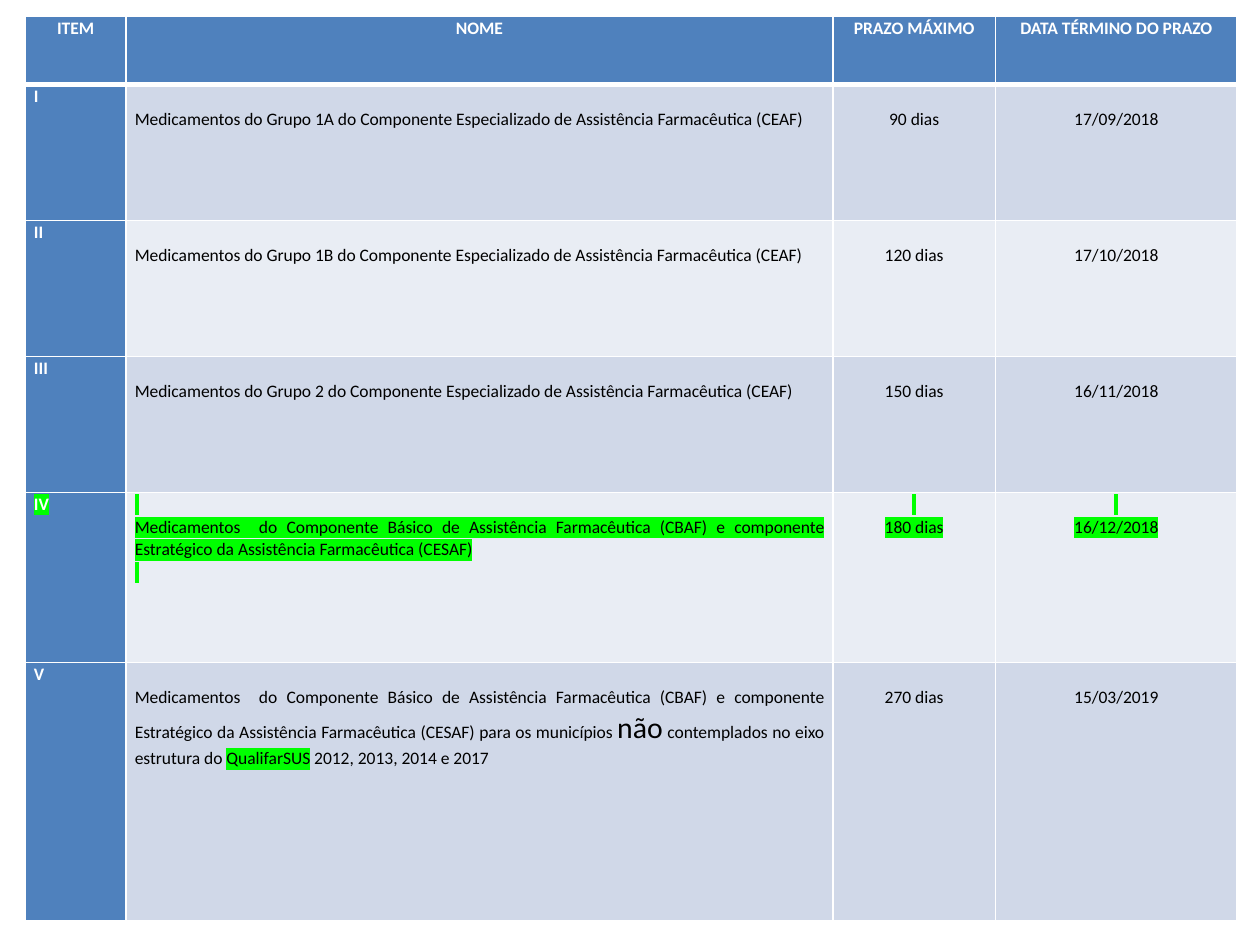
from lxml import etree
from pptx import Presentation
from pptx.dml.color import RGBColor
from pptx.enum.text import PP_ALIGN
from pptx.oxml.ns import qn
from pptx.util import Inches, Pt

LEFT, CENTER, JUSTIFY = PP_ALIGN.LEFT, PP_ALIGN.CENTER, PP_ALIGN.JUSTIFY
WIDTH, HEIGHT = 10, 7.5
COLUMN_SHARES = [0.08, 0.561, 0.129, 0.192]  # of the slide's width
ROW_UNIT = 0.27
ROW_UNITS = [2, 4, 4, 4, 5, 7.6]
TEXT_LINE = 0.18  # height of one line of table text
BLUE, WHITE, BLACK, GREEN = "4F81BD", "FFFFFF", "000000", "00FF00"
BANDS = ["D0D8E8", "E9EDF4"]
MARK = " "  # no-break space that carries a visible highlight

HEADINGS = ["ITEM", "NOME", "PRAZO MÁXIMO", "DATA TÉRMINO DO PRAZO"]
CEAF = "Medicamentos do Grupo {} do Componente Especializado de Assistência Farmacêutica (CEAF)"
CBAF = ("Medicamentos  do Componente Básico de Assistência Farmacêutica (CBAF) e componente "
        "Estratégico da Assistência Farmacêutica (CESAF)")
# A name is a list of (text, format) runs
DEADLINES = [
    ("I", [(CEAF.format("1A"), {})], "90 dias", "17/09/2018"),
    ("II", [(CEAF.format("1B"), {})], "120 dias", "17/10/2018"),
    ("III", [(CEAF.format("2"), {})], "150 dias", "16/11/2018"),
    ("IV", [(CBAF, {})], "180 dias", "16/12/2018"),
    ("V", [(CBAF + " para os municípios ", {}),
           ("não", {"size": 17}),
           (" contemplados no eixo estrutura do ", {}),
           ("QualifarSUS", {"highlight": GREEN}),
           (" 2012, 2013, 2014 e 2017", {})], "270 dias", "15/03/2019"),
]
HIGHLIGHTED_ITEM = "IV"


def rgb(value):
    return RGBColor.from_string(value)


def add_text(paragraph, text, size=10, color=BLACK, bold=False, highlight=None):
    run = paragraph.add_run()
    run.text = text
    font = run.font
    font.size, font.bold, font.name = Pt(size), bold, "Calibri"
    font.color.rgb = rgb(color)
    if highlight:
        marker = etree.Element(qn("a:highlight"))
        etree.SubElement(marker, qn("a:srgbClr"), val=highlight)
        run.font._element.find(qn("a:solidFill")).addnext(marker)


def set_borders(cell, top=1, bottom=1):
    properties = cell._tc.get_or_add_tcPr()
    widths = {"a:lnL": 1, "a:lnR": 1, "a:lnT": top, "a:lnB": bottom}
    for position, (tag, width) in enumerate(widths.items()):
        line = etree.Element(qn(tag), w=str(Pt(width)))
        fill = etree.SubElement(line, qn("a:solidFill"))
        etree.SubElement(fill, qn("a:srgbClr"), val=WHITE)
        properties.insert(position, line)


def fill_cell(cell, paragraphs, fill, align, top_lines=0, borders=None, **text_format):
    cell.margin_left = cell.margin_right = Inches(0.07)
    cell.margin_top, cell.margin_bottom = Inches(top_lines * TEXT_LINE), 0
    cell.fill.solid()
    cell.fill.fore_color.rgb = rgb(fill)
    set_borders(cell, **(borders or {}))
    frame = cell.text_frame
    for index, runs in enumerate(paragraphs):
        paragraph = frame.add_paragraph() if index else frame.paragraphs[0]
        paragraph.alignment, paragraph.line_spacing = align, 1.07
        for text, own_format in runs:
            add_text(paragraph, text, **{**text_format, **own_format})


def add_grid(slide):
    rows, columns = len(ROW_UNITS), len(COLUMN_SHARES)
    table = slide.shapes.add_table(
        rows, columns, Inches(0.02 * WIDTH), Inches(0.13),
        Inches(sum(COLUMN_SHARES) * WIDTH), Inches(sum(ROW_UNITS) * ROW_UNIT)).table
    for column, share in zip(table.columns, COLUMN_SHARES):
        column.width = Inches(share * WIDTH)
    for row, units in zip(table.rows, ROW_UNITS):
        row.height = Inches(units * ROW_UNIT)
    return table


def fill_header(table):
    for column, heading in enumerate(HEADINGS):
        fill_cell(table.cell(0, column), [[(heading, {})]], BLUE, CENTER,
                  borders={"bottom": 3}, color=WHITE, bold=True)


def fill_deadline(table, row, item, name, term, end_date):
    marked = item == HIGHLIGHTED_ITEM
    highlight = GREEN if marked else None
    borders = {"top": 3} if row == 1 else {}
    fill_cell(table.cell(row, 0), [[(item, {})]], BLUE, LEFT, borders=borders,
              color=WHITE, bold=True, highlight=highlight)

    before = [[(MARK, {})]] if marked else []
    contents = [(before + [name] + before, JUSTIFY),
                (before + [[(term, {})]], CENTER),
                (before + [[(end_date, {})]], CENTER)]
    for column, (paragraphs, align) in enumerate(contents, start=1):
        fill_cell(table.cell(row, column), paragraphs, BANDS[(row - 1) % 2], align,
                  top_lines=0 if marked else 1, borders=borders, highlight=highlight)


def main():
    deck = Presentation()
    deck.slide_width, deck.slide_height = Inches(WIDTH), Inches(HEIGHT)
    slide = deck.slides.add_slide(deck.slide_layouts[6])

    # Table of deadlines
    table = add_grid(slide)
    fill_header(table)
    for row, deadline in enumerate(DEADLINES, start=1):
        fill_deadline(table, row, *deadline)

    deck.save("out.pptx")


if __name__ == "__main__":
    main()
